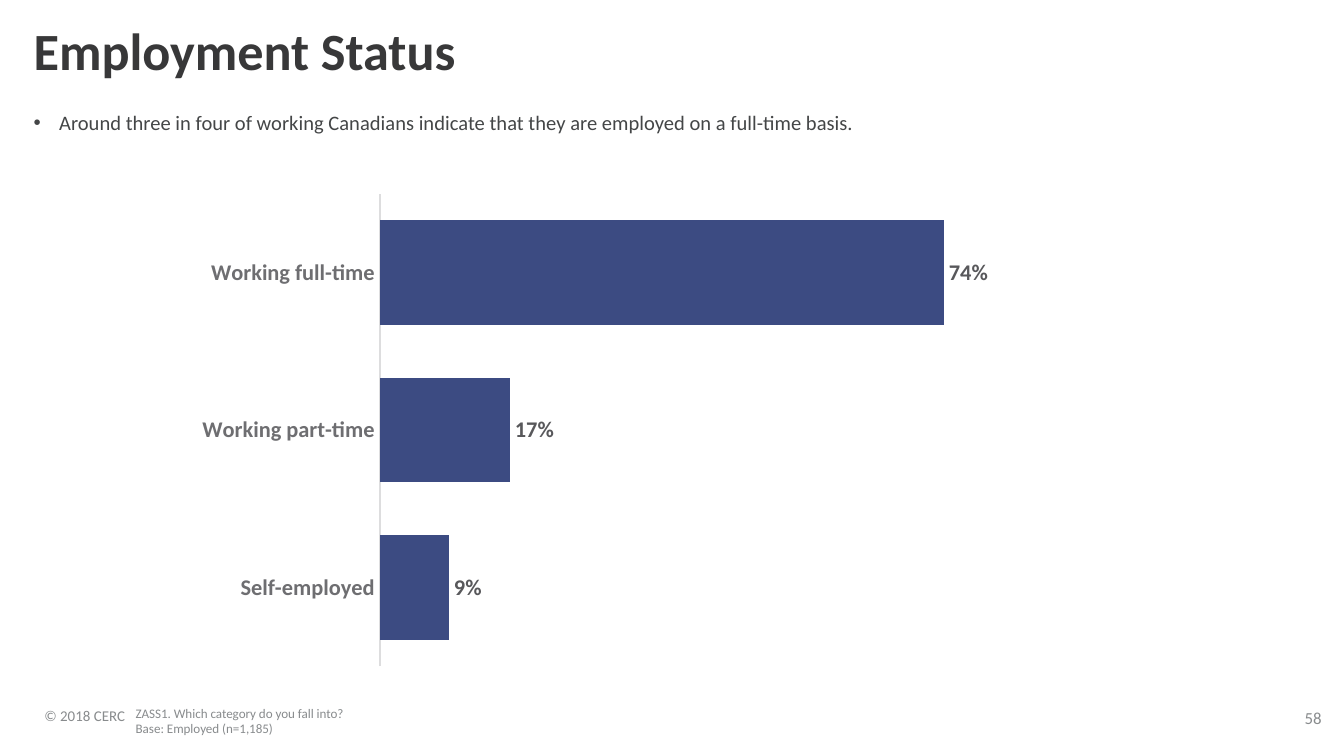
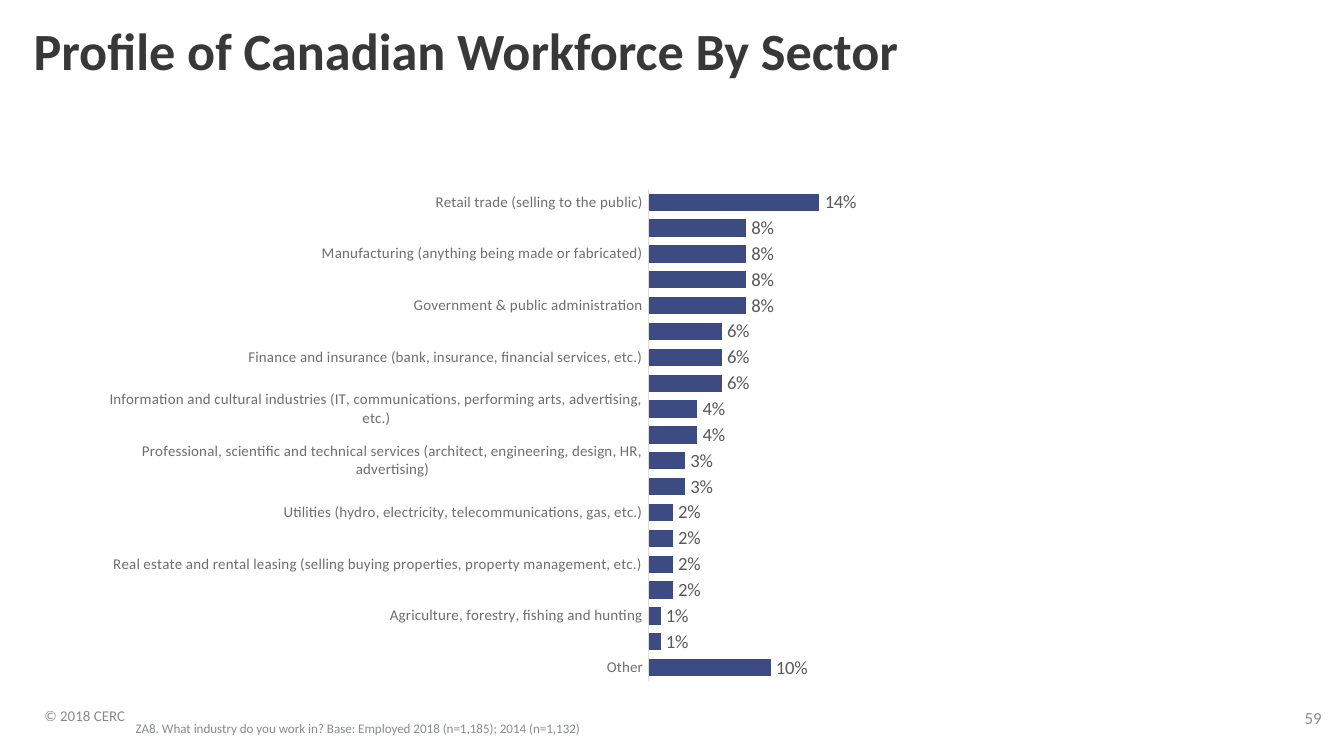
from dataclasses import dataclass

from lxml.etree import SubElement
from pptx import Presentation
from pptx.chart.data import CategoryChartData
from pptx.dml.color import RGBColor
from pptx.enum.chart import XL_CHART_TYPE, XL_LABEL_POSITION, XL_TICK_LABEL_POSITION, XL_TICK_MARK
from pptx.enum.text import MSO_ANCHOR, MSO_AUTO_SIZE, PP_ALIGN
from pptx.oxml.ns import qn
from pptx.util import Inches, Pt


@dataclass(frozen=True)
class Theme:
    font: str = "Calibri"
    title: RGBColor = RGBColor.from_string("383839")
    body: RGBColor = RGBColor.from_string("444647")
    footer: RGBColor = RGBColor.from_string("888B8D")
    chart: RGBColor = RGBColor.from_string("222223")
    axis: RGBColor = RGBColor.from_string("6E6E71")
    axis_line: RGBColor = RGBColor.from_string("DDDDDE")
    bar: RGBColor = RGBColor.from_string("3C4B82")
    value: RGBColor = RGBColor.from_string("58585B")
    title_size: int = 28
    body_size: int = 11
    chart_size: int = 10
    number_size: int = 9
    copyright_size: int = 8
    note_size: int = 7


theme = Theme()


def style_font(font, size, color, bold=False):
    font.name = theme.font
    font.size = Pt(size)
    font.color.rgb = color
    font.bold = bold


def write_text(box, place, lines, size, color, bold=False, spacing=1.0,
               align=PP_ALIGN.LEFT, anchor=MSO_ANCHOR.TOP, wrap=True, bullet=None):
    box.left, box.top, box.width, box.height = (Inches(length) for length in place)
    frame = box.text_frame
    frame.text = "\n".join(lines)
    frame.auto_size = MSO_AUTO_SIZE.NONE
    frame.word_wrap = wrap
    frame.vertical_anchor = anchor
    frame.margin_left = frame.margin_top = frame.margin_right = frame.margin_bottom = 0
    for para in frame.paragraphs:
        para.alignment = align
        para.line_spacing = spacing
        para.space_before = Pt(0)
        if bullet:
            properties = para._p.get_or_add_pPr()
            properties.set("marL", str(Inches(0.19)))
            properties.set("indent", str(-Inches(0.19)))
            SubElement(properties, qn("a:buChar")).set("char", bullet)
        style_font(para.font, size, color, bold)


pages = [
    {
        "title": "Employment Status",
        "bullets": ["Around three in four of working Canadians indicate that they are "
                    "employed on a full-time basis."],
        "note": ["ZASS1. Which category do you fall into?", "Base: Employed (n=1,185)"],
        "number": "58",
        "place": (1.36, 1.37, 7.28, 3.66),
        "shares": [("Working full-time", 0.74), ("Working part-time", 0.17), ("Self-employed", 0.09)],
        "maximum": 1,
        "label_size": 12,
        "value_size": 12,
        "bold": True,
        "plot": None,
    },
    {
        "title": "Profile of Canadian Workforce By Sector",
        "bullets": [],
        "note": ["ZA8. What industry do you work in? Base: Employed 2018 (n=1,185); 2014 (n=1,132)"],
        "number": "59",
        "place": (0.63, 1.37, 8.74, 3.89),
        "shares": [
            ("Retail trade (selling to the public)", 0.14),
            ("Construction (Industrial, Commercial, Institutional, Residential, or Engineering)", 0.08),
            ("Manufacturing (anything being made or fabricated)", 0.08),
            ("Health care and social assistance (hospitals, medical offices, social workers)", 0.08),
            ("Government & public administration", 0.08),
            ("Transportation and warehousing (logistics, deliveries, etc.)", 0.06),
            ("Finance and insurance (bank, insurance, financial services, etc.)", 0.06),
            ("Educational services (teaching, educational support, etc.)", 0.06),
            ("Information and cultural industries (IT, communications, performing arts, "
             "advertising, etc.)", 0.04),
            ("Administrative and support, waste management and remediation (office admin, "
             "travel, cleaning, etc.)", 0.04),
            ("Professional, scientific and technical services (architect, engineering, design, "
             "HR, advertising)", 0.03),
            ("Accommodation and food services (hotels, catering, etc.)", 0.03),
            ("Utilities (hydro, electricity, telecommunications, gas, etc.)", 0.02),
            ("Wholesale trade (supplying to the retail trade)", 0.02),
            ("Real estate and rental leasing (selling buying properties, property management, "
             "etc.)", 0.02),
            ("Arts, entertainment and recreation (actors, stage professionals, sports coaches)", 0.02),
            ("Agriculture, forestry, fishing and hunting", 0.01),
            ("Mining, quarrying and oil and gas extraction", 0.01),
            ("Other", 0.10),
        ],
        "maximum": 0.5,
        "label_size": 8,
        "value_size": 10,
        "bold": False,
        "plot": {"x": 0.48, "y": 0.01, "w": 0.52, "h": 0.94},
    },
]

deck = Presentation()
deck.slide_width = Inches(10)
deck.slide_height = deck.slide_width * 9 // 16
title_and_content, title_only = deck.slide_layouts[1], deck.slide_layouts[5]

for content in pages:
    page = deck.slides.add_slide(title_and_content if content["bullets"] else title_only)

    write_text(page.shapes.title, (0.25, 0.19, 8.76, 0.42), [content["title"]],
               theme.title_size, theme.title, bold=True, spacing=0.9)
    if content["bullets"]:
        write_text(page.placeholders[1], (0.25, 0.82, 9.46, 0.85), content["bullets"],
                   theme.body_size, theme.body, align=PP_ALIGN.JUSTIFY, bullet="•")

    note_height = 0.12 * len(content["note"])
    footers = [
        ((0.33, 5.21, 0.76, 0.18), ["© 2018 CERC"], theme.copyright_size, 0.85, PP_ALIGN.LEFT, False),
        ((9.63, 5.29, 0.28, 0.13), [content["number"]], theme.number_size, 0.85, PP_ALIGN.CENTER, False),
        ((1.01, 5.48 - note_height, 8.16, note_height), content["note"], theme.note_size, 1.0,
         PP_ALIGN.LEFT, True),
    ]
    for place, lines, size, spacing, align, wrap in footers:
        write_text(page.shapes.add_textbox(0, 0, 0, 0), place, lines, size, theme.footer,
                   spacing=spacing, align=align, anchor=MSO_ANCHOR.BOTTOM, wrap=wrap)

    data = CategoryChartData(number_format="0%")
    data.categories = [label for label, share in content["shares"]]
    data.add_series("Series 1", [share for label, share in content["shares"]])
    chart = page.shapes.add_chart(XL_CHART_TYPE.BAR_CLUSTERED,
                                  *(Inches(length) for length in content["place"]), data).chart
    chart.has_legend = False
    chart.has_title = False
    style_font(chart.font, theme.chart_size, theme.chart)

    categories = chart.category_axis
    categories.reverse_order = True
    categories.has_major_gridlines = False
    categories.major_tick_mark = XL_TICK_MARK.NONE
    categories.format.line.color.rgb = theme.axis_line
    categories.format.line.width = Pt(0.75)
    style_font(categories.tick_labels.font, content["label_size"], theme.axis, content["bold"])

    values = chart.value_axis
    values.minimum_scale = 0
    values.maximum_scale = content["maximum"]
    values.has_major_gridlines = False
    values.major_tick_mark = XL_TICK_MARK.NONE
    values.tick_label_position = XL_TICK_LABEL_POSITION.NONE
    values.format.line.fill.background()
    values.visible = content["plot"] is None

    bars = chart.plots[0]
    bars.gap_width = 50
    bars.vary_by_categories = False
    bars.series[0].format.fill.solid()
    bars.series[0].format.fill.fore_color.rgb = theme.bar
    bars.has_data_labels = True
    labels = bars.data_labels
    labels.show_value = True
    labels.number_format = "0%"
    labels.number_format_is_linked = False
    labels.position = XL_LABEL_POSITION.OUTSIDE_END
    style_font(labels.font, content["value_size"], theme.value, content["bold"])

    if content["plot"]:
        area = chart._chartSpace.chart.plotArea
        layout = area.find(qn("c:layout"))
        if layout is None:
            layout = SubElement(area, qn("c:layout"))
            area.insert(0, layout)
        manual = SubElement(layout, qn("c:manualLayout"))
        settings = {"layoutTarget": "inner", "xMode": "edge", "yMode": "edge", **content["plot"]}
        for name, setting in settings.items():
            SubElement(manual, qn(f"c:{name}")).set("val", str(setting))

deck.save("out.pptx")
